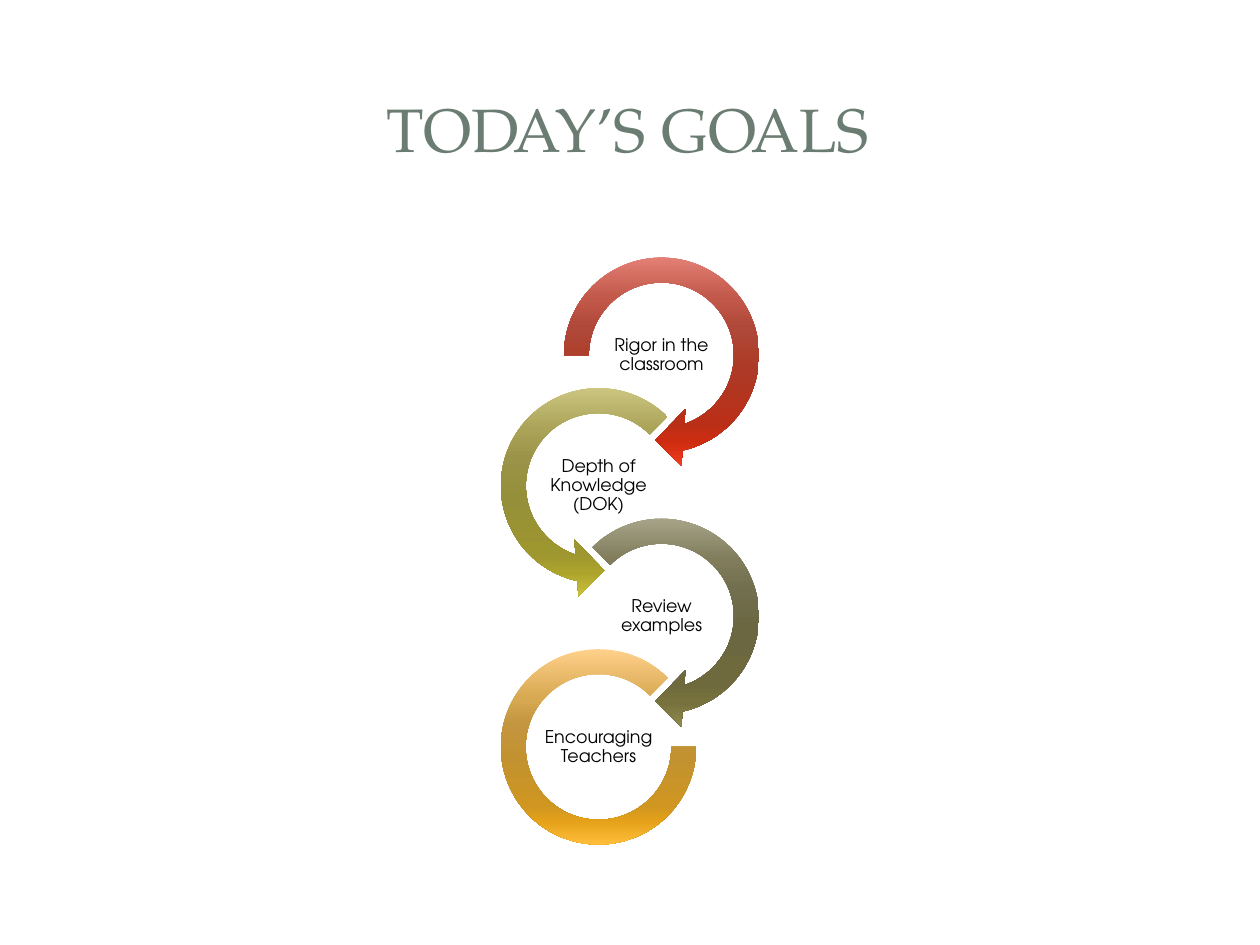
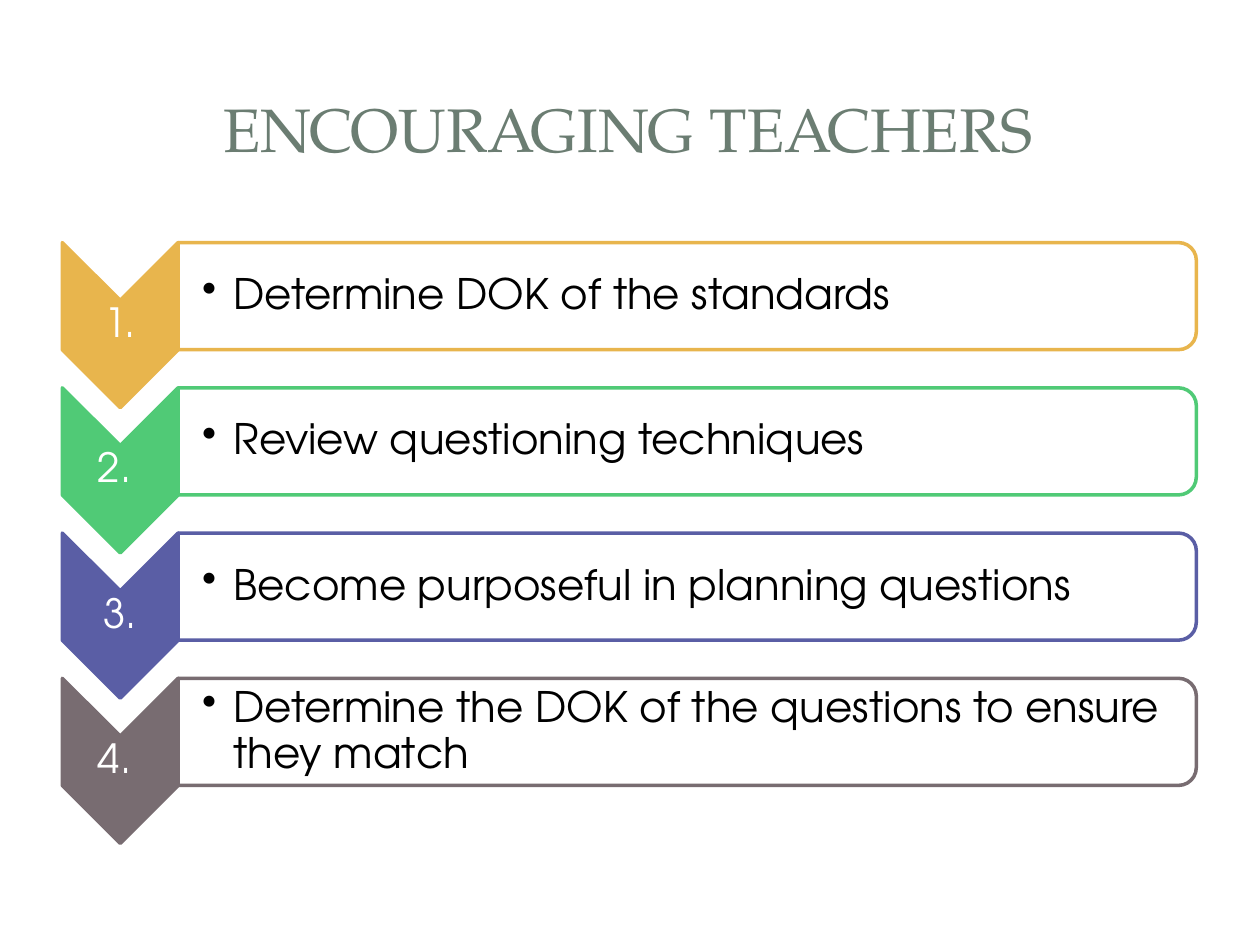
from collections import namedtuple

from lxml.etree import SubElement
from pptx import Presentation
from pptx.dml.color import RGBColor
from pptx.enum.shapes import MSO_SHAPE as Preset
from pptx.enum.text import MSO_ANCHOR as Anchor, PP_ALIGN as Align
from pptx.oxml.ns import qn
from pptx.util import Pt

Box = namedtuple("Box", "left top width height")
Goal = namedtuple("Goal", "label preset diameter adjustments colours")

WHITE = RGBColor(0xFF, 0xFF, 0xFF)
BLACK = RGBColor(0x00, 0x00, 0x00)
SAGE = RGBColor(0x6B, 0x7D, 0x72)
GOLD = RGBColor(0xE8, 0xB5, 0x4D)
GREEN = RGBColor(0x50, 0xCA, 0x76)
INDIGO = RGBColor(0x5A, 0x5E, 0xA5)
MAUVE = RGBColor(0x78, 0x6C, 0x71)


def shades(codes):
    return [RGBColor.from_string(code) for code in codes.split()]


RED_SHADES = shades("EF8E85 C1584A B04839 AD3A26 BA2F18 CD2C10 F63D1F")
OLIVE_SHADES = shades("D8D290 AAA358 9A9348 958F39 9E962F ACA32C D0C53D")
KHAKI_SHADES = shades("B5B299 807C5C 726F4F 6B6741 6E6A3D 77723D 928C50")
AMBER_SHADES = shades("FFD08A D7A952 C49640 C29230 CF9621 E4A119 FFBD3B")
SHADE_STOPS = (0, 25, 38, 55, 80, 88, 100)

SERIF = "TeX Gyre Pagella"
SANS = "TeX Gyre Adventor"
TITLE_FONT = {"name": SERIF, "size": Pt(35)}
GOAL_FONT = {"name": SANS, "size": Pt(10)}
NUMBER_FONT = {"name": SANS, "size": Pt(23)}
STEP_FONT = {"name": SANS, "size": Pt(24)}

TITLE_BOX = Box(33.8, 32.4, 650, 82)
GOALS_BOX = Box(277.2, 138.2, 165.6, 353.4)
STEPS_BOX = Box(35.6, 138.6, 648, 343.3)

GOALS = [
    Goal("Rigor in the classroom", Preset.CIRCULAR_ARROW, 129.6,
         (0.11, 11.42, 45, 108, 0.125), RED_SHADES),
    Goal("Depth of Knowledge (DOK)", Preset.LEFT_CIRCULAR_ARROW, 129.6,
         (0.11, 11.42, 63, 189, 0.125), OLIVE_SHADES),
    Goal("Review examples", Preset.CIRCULAR_ARROW, 129.6,
         (0.11, 11.42, 45, 135, 0.125), KHAKI_SHADES),
    Goal("Encouraging Teachers", Preset.BLOCK_ARC, 111.6,
         (0, 189, 0.127), AMBER_SHADES),
]
STEPS = [
    ("1.", "Determine DOK of the standards", GOLD),
    ("2. ", "Review questioning techniques", GREEN),
    ("3.", "Become purposeful in planning questions", INDIGO),
    ("4. ", "Determine the DOK of the questions to ensure they match", MAUVE),
]


def apply_format(target, values):
    for key, value in values.items():
        setattr(target, key, value)


def points(box):
    return [Pt(length) for length in box]


def centred_box(x, y, width, height):
    return Box(x - width / 2, y - height / 2, width, height)


def add_text(slide, box, text, font, colour, margin, align=Align.CENTER,
             left_margin=None, spacing=0.9):
    frame = slide.shapes.add_textbox(*points(box)).text_frame
    apply_format(frame, {
        "word_wrap": True,
        "vertical_anchor": Anchor.MIDDLE,
        "margin_left": Pt(margin if left_margin is None else left_margin),
        "margin_right": Pt(margin),
        "margin_top": Pt(margin),
        "margin_bottom": Pt(margin),
    })
    paragraph = frame.paragraphs[0]
    apply_format(paragraph, {"alignment": align, "line_spacing": spacing})
    run = paragraph.add_run()
    run.text = text
    apply_format(run.font, font)
    run.font.color.rgb = colour
    return paragraph


def add_bullet(paragraph, indent):
    properties = paragraph._p.get_or_add_pPr()
    properties.set("marL", str(Pt(indent)))
    properties.set("indent", str(-Pt(indent)))
    SubElement(properties, qn("a:buChar")).set("char", "•")


def add_title(slide, box, text):
    add_text(slide, box, text, TITLE_FONT, SAGE, 3.6, spacing=1.0)


def shade_vertically(shape, colours):
    shape.fill.gradient()
    shape.fill.gradient_angle = 270
    stops = shape._element.spPr.find(qn("a:gradFill")).find(qn("a:gsLst"))
    for stop in list(stops):
        stops.remove(stop)
    for percent, colour in zip(SHADE_STOPS, colours):
        stop = SubElement(stops, qn("a:gs"), pos=str(percent * 1000))
        SubElement(stop, qn("a:srgbClr"), val=str(colour))


def add_goal_chain(slide, box, goals):
    diameter = max(goal.diameter for goal in goals)
    radius = diameter / 2
    pitch = (box.height - diameter) / (len(goals) - 1)
    columns = (box.left + box.width - radius, box.left + radius)
    for index, goal in enumerate(goals):
        x, y = columns[index % 2], box.top + radius + index * pitch
        ring_box = centred_box(x, y, goal.diameter, goal.diameter)
        ring = slide.shapes.add_shape(goal.preset, *points(ring_box))
        ring.shadow.inherit = False
        for position, value in enumerate(goal.adjustments):
            ring.adjustments[position] = value
        ring.line.fill.background()
        shade_vertically(ring, goal.colours)
        add_text(slide, centred_box(x, y, 72.7, 36), goal.label,
                 GOAL_FONT, BLACK, 0.7)


def add_turned_shape(slide, preset, box, fill, line):
    x, y = box.left + box.width / 2, box.top + box.height / 2
    upright = centred_box(x, y, box.height, box.width)
    shape = slide.shapes.add_shape(preset, *points(upright))
    shape.rotation = 90
    shape.shadow.inherit = False
    shape.fill.solid()
    shape.fill.fore_color.rgb = fill
    shape.line.color.rgb = line
    shape.line.width = Pt(2)


def add_step(slide, box, number, text, colour):
    chevron_width, panel_height = 66.2, 61.2
    chevron = Box(box.left, box.top, chevron_width, box.height)
    panel = Box(box.left + chevron_width, box.top,
                box.width - chevron_width, panel_height)
    add_turned_shape(slide, Preset.CHEVRON, chevron, colour, colour)
    add_text(slide, Box(box.left, box.top + 32.9, chevron_width, 28),
             number, NUMBER_FONT, WHITE, 1.4)
    add_turned_shape(slide, Preset.ROUND_2_SAME_RECTANGLE, panel, WHITE, colour)
    step_text = Box(panel.left, panel.top + 2.9, panel.width - 2.9,
                    panel.height - 5.8)
    paragraph = add_text(slide, step_text, text, STEP_FONT, BLACK, 1.4,
                         align=Align.LEFT, left_margin=13.7)
    add_bullet(paragraph, 18)


def add_step_list(slide, box, steps):
    row_height = 94.3
    pitch = (box.height - row_height) / (len(steps) - 1)
    for index, step in enumerate(steps):
        row = Box(box.left, box.top + index * pitch, box.width, row_height)
        add_step(slide, row, *step)


def add_page(deck, title):
    slide = deck.slides.add_slide(deck.slide_layouts[6])
    slide.background.fill.solid()
    slide.background.fill.fore_color.rgb = WHITE
    add_title(slide, TITLE_BOX, title)
    return slide


def main():
    deck = Presentation()
    apply_format(deck, {"slide_width": Pt(720), "slide_height": Pt(540)})
    add_goal_chain(add_page(deck, "TODAY’S GOALS"), GOALS_BOX, GOALS)
    add_step_list(add_page(deck, "ENCOURAGING TEACHERS"), STEPS_BOX, STEPS)
    deck.save("out.pptx")


if __name__ == "__main__":
    main()
